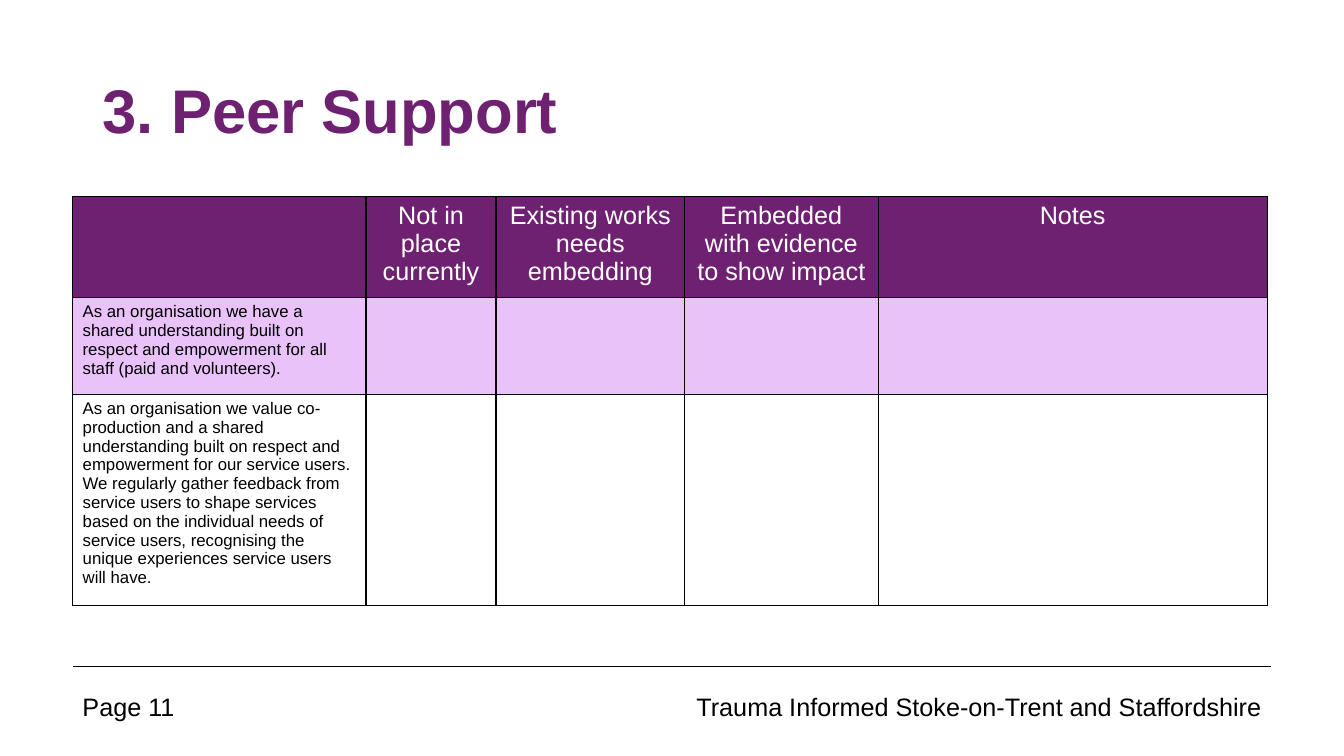
from lxml import etree
from pptx import Presentation
from pptx.dml.color import RGBColor
from pptx.enum.shapes import MSO_CONNECTOR
from pptx.enum.text import MSO_ANCHOR, PP_ALIGN
from pptx.oxml import parse_xml
from pptx.oxml.ns import nsdecls, qn
from pptx.util import Inches, Pt

PURPLE = RGBColor(0x6F, 0x21, 0x71)
LILAC = RGBColor(0xEA, 0xC2, 0xFA)
WHITE = RGBColor(0xFF, 0xFF, 0xFF)
BLACK = RGBColor(0, 0, 0)
FONT = "Arial"

# Boxes as left, top, width, height in inches
TITLE_BOX = (0.92, 0.4, 11.5, 1.45)
TABLE_BOX = (0.72, 1.95, 11.85, 4.06)
FOOTER_BOX = (0.72, 6.61, 11.89, 0.6)

COLUMNS = [2.91, 1.29, 1.87, 1.92, 3.86]
ROWS = [1.0, 0.96, 2.1]
HEADINGS = ["", "Not in place currently", "Existing works needs embedding",
            "Embedded with evidence to show impact", "Notes"]
STATEMENTS = [
    "As an organisation we have a shared understanding built on respect and "
    "empowerment for all staff (paid and volunteers).",
    "As an organisation we value co-production and a shared understanding "
    "built on respect and empowerment for our service users. We regularly "
    "gather feedback from service users to shape services based on the "
    "individual needs of service users, recognising the unique experiences "
    "service users will have.",
]


def write_text(frame, text, size=18, color=BLACK, bold=False,
               align=PP_ALIGN.LEFT, anchor=None, spacing=None):
    frame.word_wrap = True
    if anchor is not None:
        frame.vertical_anchor = anchor
    paragraph = frame.paragraphs[0]
    paragraph.alignment = align
    if spacing:
        paragraph.line_spacing = spacing
    run = paragraph.add_run()
    run.text = text
    font = run.font
    font.name, font.size, font.bold = FONT, Pt(size), bold
    font.color.rgb = color


def add_text(slide, box, text, **style):
    shape = slide.shapes.add_textbox(*map(Inches, box))
    write_text(shape.text_frame, text, **style)


def add_borders(cell):
    properties = cell._tc.get_or_add_tcPr()
    for position, side in enumerate(("lnL", "lnR", "lnT", "lnB")):
        border = parse_xml(
            f'<a:{side} {nsdecls("a")} w="12700"><a:solidFill>'
            f'<a:srgbClr val="{BLACK}"/></a:solidFill></a:{side}>')
        properties.insert(position, border)


def add_title(slide, box):
    add_text(slide, box, "3. Peer Support", size=44, color=PURPLE, bold=True,
             anchor=MSO_ANCHOR.MIDDLE, spacing=0.9)


def add_assessment_table(slide, box):
    cells = [HEADINGS] + [[text] + [""] * (len(COLUMNS) - 1)
                          for text in STATEMENTS]
    table = slide.shapes.add_table(len(ROWS), len(COLUMNS),
                                   *map(Inches, box)).table
    for column, width in zip(table.columns, COLUMNS):
        column.width = Inches(width)
    for row, height in zip(table.rows, ROWS):
        row.height = Inches(height)

    heading_style = dict(color=WHITE, align=PP_ALIGN.CENTER)
    for r, (texts, fill) in enumerate(zip(cells, (PURPLE, LILAC, WHITE))):
        style = heading_style if r == 0 else dict(size=12)
        for c, text in enumerate(texts):
            cell = table.cell(r, c)
            cell.fill.solid()
            cell.fill.fore_color.rgb = fill
            add_borders(cell)
            if text:
                write_text(cell.text_frame, text, **style)


def add_footer(slide, box):
    left, top, width, height = box
    # Rule above the footer
    line = slide.shapes.add_connector(
        MSO_CONNECTOR.STRAIGHT, Inches(left), Inches(top),
        Inches(left + width), Inches(top))
    line.line.color.rgb = BLACK
    line.line.width = Pt(0.5)
    etree.SubElement(line._element.spPr, qn("a:effectLst"))

    # Page number on the left, programme name on the right
    text_top, text_height = top + height / 3, height * 2 / 3
    page_width, name_width = 1.2, 5.86
    add_text(slide, (left, text_top, page_width, text_height), "Page 11")
    add_text(slide,
             (left + width - name_width, text_top, name_width, text_height),
             "Trauma Informed Stoke-on-Trent and Staffordshire",
             align=PP_ALIGN.RIGHT)


def main():
    presentation = Presentation()
    presentation.slide_width = Inches(13.33)
    presentation.slide_height = Inches(7.5)
    slide = presentation.slides.add_slide(presentation.slide_layouts[6])
    add_title(slide, TITLE_BOX)
    add_assessment_table(slide, TABLE_BOX)
    add_footer(slide, FOOTER_BOX)
    presentation.save("out.pptx")


if __name__ == "__main__":
    main()
